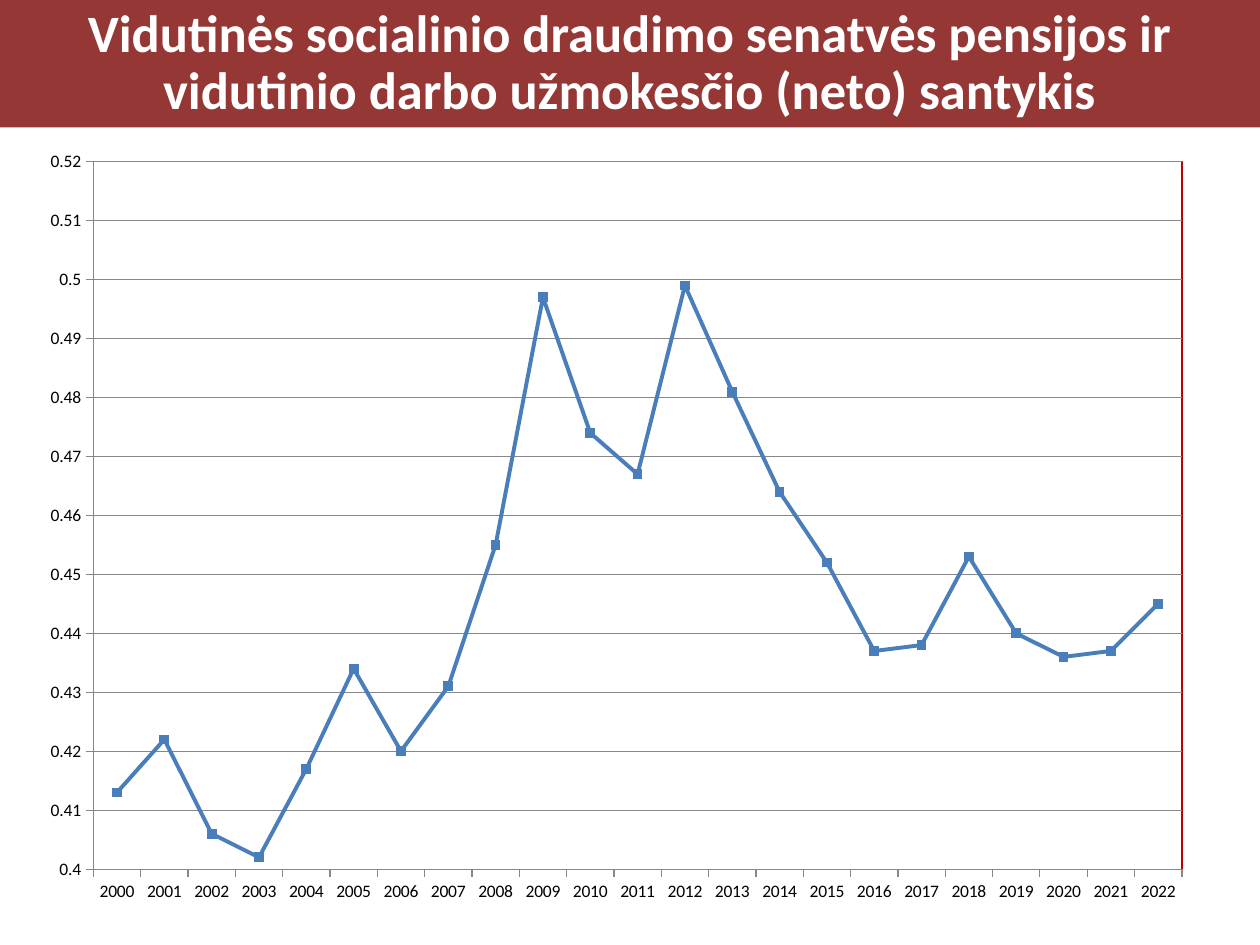
from lxml.etree import fromstring
from pptx import Presentation
from pptx.chart.chart import Chart
from pptx.chart.data import CategoryChartData
from pptx.dml.color import RGBColor
from pptx.enum.chart import XL_CHART_TYPE, XL_MARKER_STYLE, XL_TICK_MARK
from pptx.enum.text import MSO_ANCHOR, MSO_AUTO_SIZE, PP_ALIGN
from pptx.oxml.ns import qn
from pptx.slide import Slide
from pptx.util import Cm, Pt

FONT = "Calibri"
BANNER_RED = RGBColor(0x95, 0x37, 0x35)
FRAME_RED = RGBColor(0xC0, 0x00, 0x00)
LINE_BLUE = RGBColor(0x4A, 0x7E, 0xBB)
MARKER_BLUE = RGBColor(0x4F, 0x81, 0xBD)
GRID_GREY = RGBColor(0x87, 0x87, 0x87)
BLACK = RGBColor(0x00, 0x00, 0x00)
WHITE = RGBColor(0xFF, 0xFF, 0xFF)

TITLE = (
    "Vidutinės socialinio draudimo senatvės pensijos ir "
    "vidutinio darbo užmokesčio (neto) santykis"
)
FIRST_YEAR = 2000
RATIOS = (
    0.413, 0.422, 0.406, 0.402, 0.417, 0.434, 0.42, 0.431,
    0.455, 0.497, 0.474, 0.467, 0.499, 0.481, 0.464, 0.452,
    0.437, 0.438, 0.453, 0.44, 0.436, 0.437, 0.445,
)
CHART_NS = "http://schemas.openxmlformats.org/drawingml/2006/chart"
DRAWING_NS = "http://schemas.openxmlformats.org/drawingml/2006/main"


def add_banner_title(page: Slide) -> None:
    title = page.shapes.title
    title.left, title.top, title.width, title.height = Cm(0), Cm(0), Cm(25.4), Cm(2.57)
    title.fill.solid()
    title.fill.fore_color.rgb = BANNER_RED
    frame = title.text_frame
    frame.text = TITLE
    frame.word_wrap = True
    frame.auto_size = MSO_AUTO_SIZE.NONE
    frame.vertical_anchor = MSO_ANCHOR.MIDDLE
    para = frame.paragraphs[0]
    para.alignment = PP_ALIGN.CENTER
    para.line_spacing = 0.9
    para.font.name = FONT
    para.font.size = Pt(30)
    para.font.bold = True
    para.font.color.rgb = WHITE


def place_and_frame_plot(
    chart: Chart, x: float, y: float, width: float, height: float
) -> None:
    """Fix the inner plot area, in fractions of the chart, and outline it."""
    plot_area = chart.element.find(f".//{qn('c:plotArea')}")
    for old_layout in plot_area.findall(qn("c:layout")):
        plot_area.remove(old_layout)
    layout = fromstring(
        f'<c:layout xmlns:c="{CHART_NS}"><c:manualLayout>'
        '<c:layoutTarget val="inner"/><c:xMode val="edge"/><c:yMode val="edge"/>'
        f'<c:x val="{x}"/><c:y val="{y}"/><c:w val="{width}"/><c:h val="{height}"/>'
        "</c:manualLayout></c:layout>"
    )
    outline = fromstring(
        f'<c:spPr xmlns:c="{CHART_NS}" xmlns:a="{DRAWING_NS}"><a:noFill/>'
        f'<a:ln w="{Pt(0.75)}"><a:solidFill><a:srgbClr val="{FRAME_RED}"/>'
        "</a:solidFill></a:ln></c:spPr>"
    )
    plot_area.insert(0, layout)
    plot_area.append(outline)


def add_ratio_chart(page: Slide) -> None:
    data = CategoryChartData()
    data.categories = [str(FIRST_YEAR + index) for index in range(len(RATIOS))]
    data.add_series("Series 1", RATIOS)
    chart = page.shapes.add_chart(
        XL_CHART_TYPE.LINE_MARKERS, Cm(0.5), Cm(2.72), Cm(23.42), Cm(15.47), data
    ).chart
    chart.has_legend = False
    chart.has_title = False
    chart.font.name = FONT
    chart.font.size = Pt(10)
    chart.font.color.rgb = BLACK

    for axis in (chart.category_axis, chart.value_axis):
        axis.major_tick_mark = XL_TICK_MARK.OUTSIDE
        axis.minor_tick_mark = XL_TICK_MARK.NONE
        axis.format.line.color.rgb = GRID_GREY
        axis.format.line.width = Pt(0.75)
    chart.category_axis.has_major_gridlines = False

    values = chart.value_axis
    values.minimum_scale, values.maximum_scale = 0.4, 0.52
    values.major_unit = 0.01
    values.has_major_gridlines = True
    values.major_gridlines.format.line.color.rgb = GRID_GREY
    values.major_gridlines.format.line.width = Pt(0.75)
    values.tick_labels.number_format = "General"
    values.tick_labels.number_format_is_linked = False

    chart.plots[0].vary_by_categories = False
    series = chart.plots[0].series[0]
    series.smooth = False
    series.format.line.color.rgb = LINE_BLUE
    series.format.line.width = Pt(2.25)
    series.marker.style = XL_MARKER_STYLE.SQUARE
    series.marker.size = 5
    series.marker.format.fill.solid()
    series.marker.format.fill.fore_color.rgb = MARKER_BLUE
    series.marker.format.line.color.rgb = LINE_BLUE
    place_and_frame_plot(chart, x=0.059, y=0.035, width=0.937, height=0.922)


def main() -> None:
    deck = Presentation()
    deck.slide_width, deck.slide_height = Cm(25.4), Cm(19.05)
    page = deck.slides.add_slide(deck.slide_layouts.get_by_name("Title Only"))
    add_banner_title(page)
    add_ratio_chart(page)
    deck.save("out.pptx")


if __name__ == "__main__":
    main()
